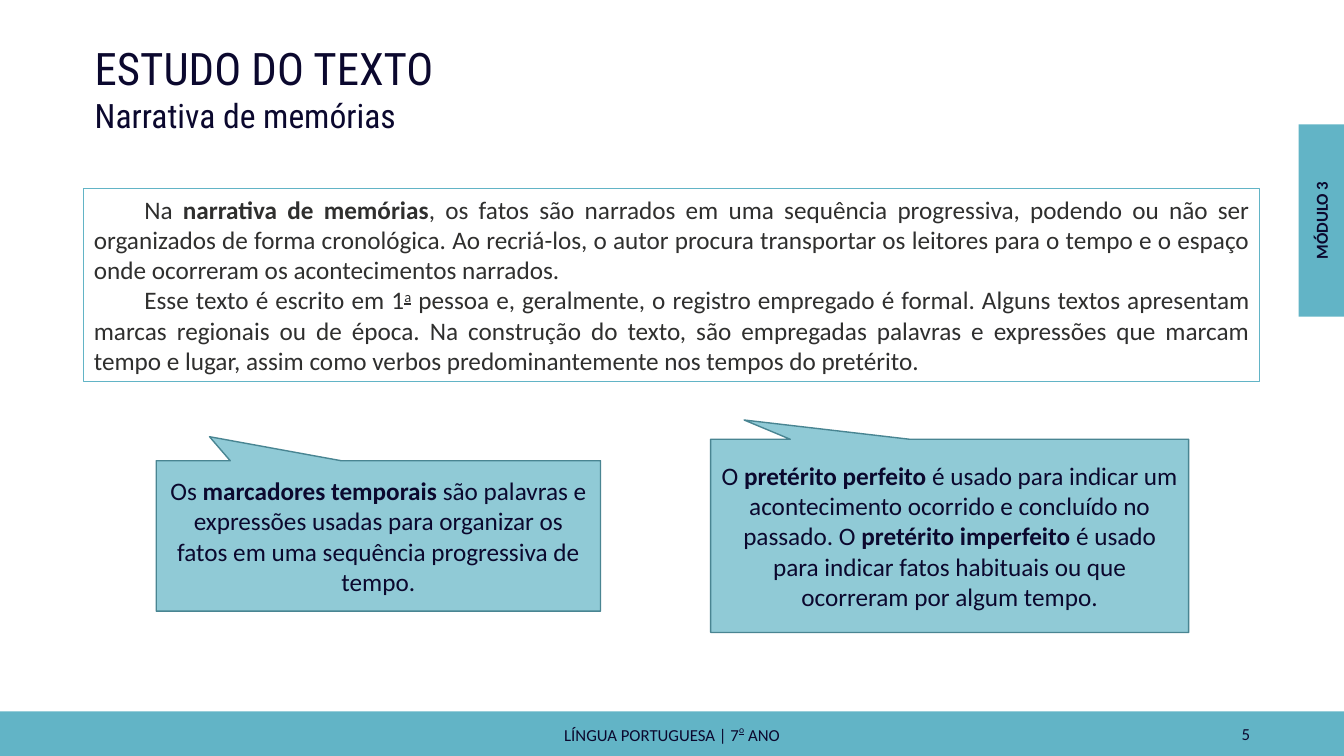
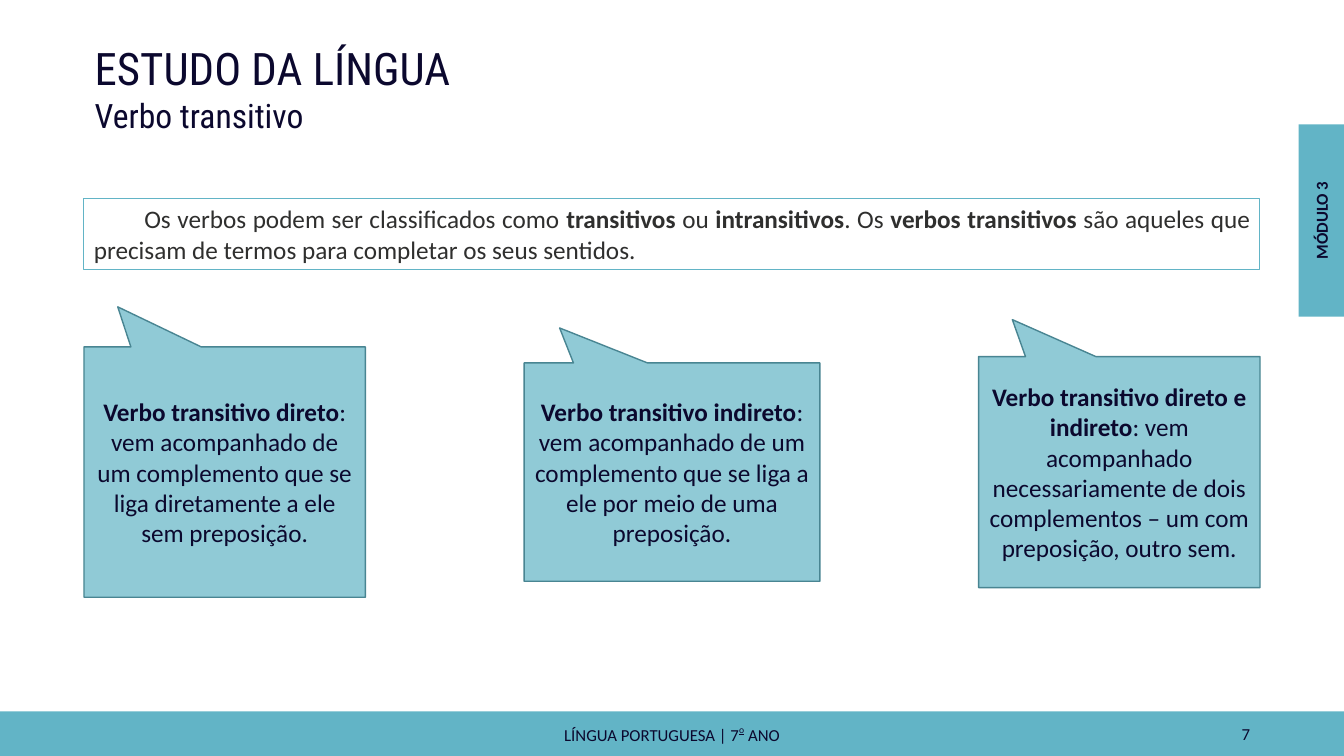
import pptx
import pptx.dml.color
import pptx.enum.shapes
import pptx.enum.text
import pptx.oxml
import pptx.util

COLORS = {"teal": "62B4C6", "edge": "498592", "navy": "0B082E", "body": "2F2F2E", "paper": "FFFFFF"}
COLUMNS, ROWS = 16, 9
SHAPE = pptx.enum.shapes.MSO_SHAPE
ALIGN = pptx.enum.text.PP_ALIGN
ANCHOR = pptx.enum.text.MSO_ANCHOR
AUTO_SIZE = pptx.enum.text.MSO_AUTO_SIZE


def rgb(name):
    return pptx.dml.color.RGBColor.from_string(COLORS[name])


def write(frame, text, sizes=(18,), font="Calibri", color="navy", bold=False, align=ALIGN.LEFT,
          anchor=ANCHOR.MIDDLE, grow=False, after=0, indent=0, raised=30):
    """Lines become paragraphs; *bold* and ^ordinal^ mark runs."""
    frame.word_wrap = True
    frame.vertical_anchor = anchor
    frame.auto_size = AUTO_SIZE.SHAPE_TO_FIT_TEXT if grow else AUTO_SIZE.NONE
    for index, line in enumerate(text.split("\n")):
        paragraph = frame.add_paragraph() if index else frame.paragraphs[0]
        paragraph.alignment = align
        paragraph.space_after = pptx.util.Pt(after)
        if indent:
            properties = paragraph._p.get_or_add_pPr()
            properties.set("marL", "0")
            properties.set("indent", str(pptx.util.Inches(indent)))
        for strong, part in enumerate(line.split("*")):
            for ordinal, piece in enumerate(part.split("^")):
                if not piece:
                    continue
                run = paragraph.add_run()
                run.text = piece
                run.font.name = font
                run.font.size = pptx.util.Pt(sizes[min(index, len(sizes) - 1)])
                run.font.color.rgb = rgb(color)
                run.font.bold = bold or strong % 2 == 1
                if ordinal % 2:
                    run.font.underline = True
                    run._r.get_or_add_rPr().set("baseline", str(raised * 1000))


class Lesson:
    def __init__(self):
        self.deck = pptx.Presentation()
        self.deck.slide_width = pptx.util.Inches(13.33)
        self.deck.slide_height = pptx.util.Inches(7.5)
        self.slide = None

    def place(self, left, top, width, height):
        column = self.deck.slide_width / COLUMNS
        row = self.deck.slide_height / ROWS
        return [round(v) for v in (left * column, top * row, width * column, height * row)]

    def new_slide(self, title, subtitle, number):
        self.slide = self.deck.slides.add_slide(self.deck.slide_layouts[6])
        self.slide.background.fill.solid()
        self.slide.background.fill.fore_color.rgb = rgb("paper")
        self.footer(number)
        self.module_tab("MÓDULO 3")
        self.label((1.01, 0.43, 7.27, 1.25), f"{title}\n{subtitle}", sizes=(32, 24),
                   font="Roboto Condensed", anchor=ANCHOR.TOP, grow=True)

    def label(self, box, text, rotation=0, **style):
        label = self.slide.shapes.add_textbox(*self.place(*box))
        label.rotation = rotation
        write(label.text_frame, text, **style)

    def block(self, box, kind=SHAPE.RECTANGLE, fill=None, line=None, weight=1):
        block = self.slide.shapes.add_shape(kind, *self.place(*box))
        block.shadow.inherit = False
        if fill:
            block.fill.solid()
            block.fill.fore_color.rgb = rgb(fill)
        else:
            block.fill.background()
        if line:
            block.line.color.rgb = rgb(line)
            block.line.width = pptx.util.Pt(weight)
        else:
            block.line.fill.background()
        return block

    def footer(self, number):
        self.block((0, 8.47, COLUMNS, 0.53), fill="teal")
        self.label((5.3, 8.51, 5.4, 0.46), "LÍNGUA PORTUGUESA | 7^o^ ANO", sizes=(12,),
                   align=ALIGN.CENTER, after=6, raised=45)
        self.label((11.3, 8.51, 3.7, 0.46), str(number), sizes=(12,), align=ALIGN.RIGHT, after=6)

    def module_tab(self, text):
        left, top, width, height = 15.46, 1.48, 0.54, 2.29
        depth = 0.36
        self.block((left, top, width, height), fill="teal")
        self.label((left + (width - height) / 2, top + (height - depth) / 2, height, depth), text,
                   rotation=270, sizes=(12,), bold=True, align=ALIGN.CENTER,
                   anchor=ANCHOR.TOP, grow=True)

    def definition(self, top, height, text):
        panel = self.block((1, top, 14, height), line="teal", weight=0.75)
        write(panel.text_frame, text, color="body", align=ALIGN.JUSTIFY, indent=0.5, grow=True)

    def callout(self, box, text, tip):
        callout = self.block(box, SHAPE.RECTANGULAR_CALLOUT, "teal", "edge")
        callout.adjustments[0], callout.adjustments[1] = tip
        tint = callout.fill._xPr.find(".//" + pptx.oxml.ns.qn("a:srgbClr"))
        alpha = pptx.oxml.parse_xml(f'<a:alpha {pptx.oxml.ns.nsdecls("a")} val="70000"/>')
        tint.append(alpha)
        write(callout.text_frame, text, align=ALIGN.CENTER)

    def callout_row(self, left, right, middle, notes):
        free = right - left - sum(width for width, *_ in notes)
        gap = free / (len(notes) - 1)
        for width, height, tip, text in notes:
            self.callout((left, middle - height / 2, width, height), text, tip)
            left += width + gap


def main():
    lesson = Lesson()
    tip = (-0.38, -0.66)

    lesson.new_slide("ESTUDO DO TEXTO", "Narrativa de memórias", 5)
    lesson.definition(
        2.24, 2.3,
        "Na *narrativa de memórias*, os fatos são narrados em uma sequência progressiva, podendo ou "
        "não ser organizados de forma cronológica. Ao recriá-los, o autor procura transportar os "
        "leitores para o tempo e o espaço onde ocorreram os acontecimentos narrados.\n"
        "Esse texto é escrito em 1^a^ pessoa e, geralmente, o registro empregado é formal. Alguns "
        "textos apresentam marcas regionais ou de época. Na construção do texto, são empregadas "
        "palavras e expressões que marcam tempo e lugar, assim como verbos predominantemente nos "
        "tempos do pretérito.")
    lesson.callout_row(1.86, 14.15, 6.38, [
        (5.29, 1.79, tip,
         "Os *marcadores temporais *são palavras e expressões usadas para organizar os fatos em "
         "uma sequência progressiva de tempo."),
        (5.69, 2.3, (-0.43, -0.6),
         "O *pretérito perfeito *é usado para indicar um acontecimento ocorrido e concluído no "
         "passado. O *pretérito imperfeito* é usado para indicar fatos habituais ou que ocorreram "
         "por algum tempo."),
    ])

    lesson.new_slide("ESTUDO DA LÍNGUA", "Verbo transitivo", 7)
    lesson.definition(
        2.36, 0.85,
        "Os verbos podem ser classificados como *transitivos* ou *intransitivos*. Os *verbos "
        "transitivos *são aqueles que precisam de termos para completar os seus sentidos.")
    lesson.callout_row(1, 15, 5.62, [
        (3.35, 2.98, tip,
         "*Verbo transitivo direto*: vem acompanhado de um complemento que se liga diretamente a "
         "ele sem preposição."),
        (3.52, 2.6, tip,
         "*Verbo transitivo indireto*: vem acompanhado de um complemento que se liga a ele por "
         "meio de uma preposição."),
        (3.35, 2.75, tip,
         "*Verbo transitivo direto e indireto*: vem acompanhado necessariamente de dois "
         "complementos – um com preposição, outro sem."),
    ])
    lesson.deck.save("out.pptx")


if __name__ == "__main__":
    main()
